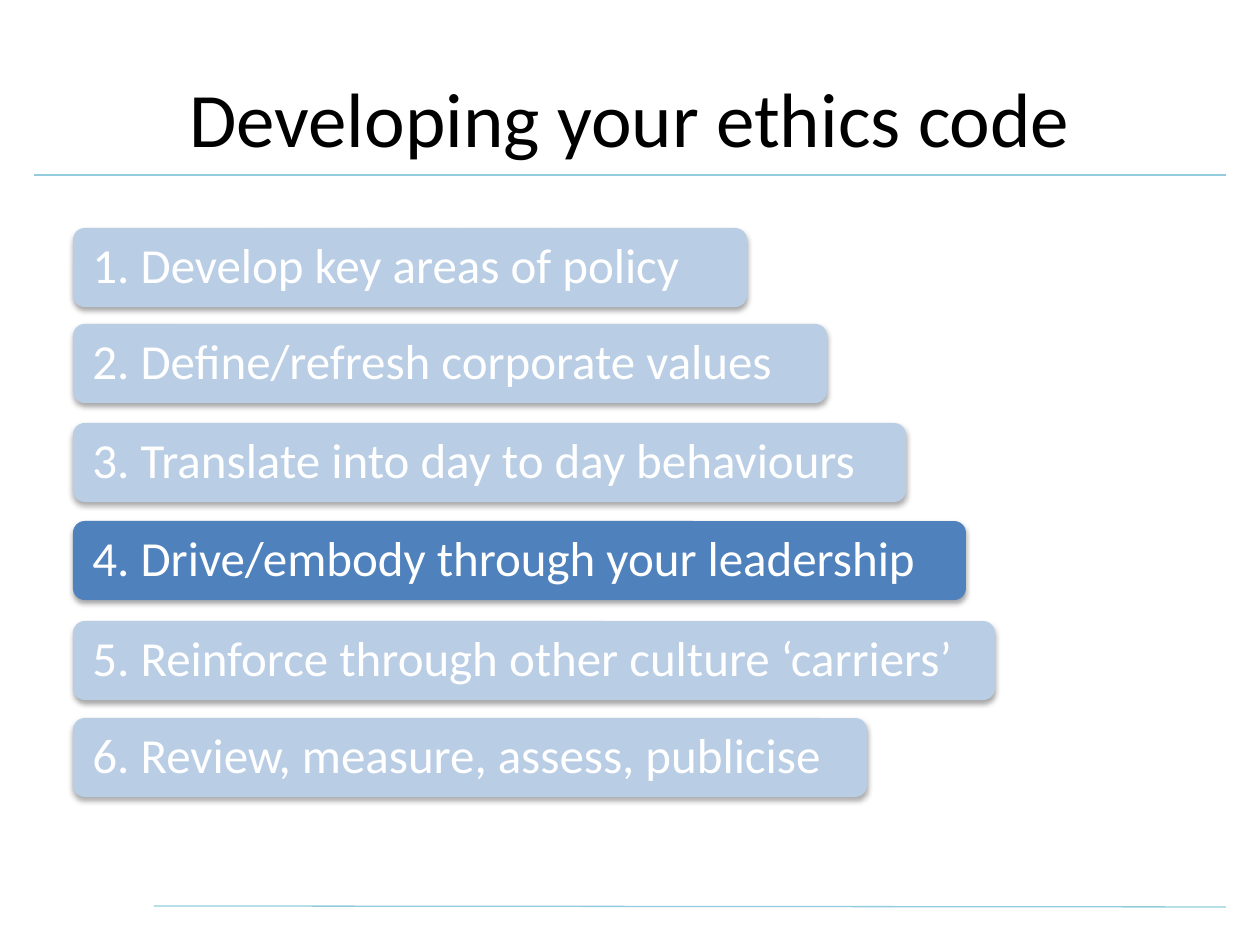
"""Build the slide on the six steps of developing an ethics code."""
from lxml.etree import SubElement
from pptx import Presentation
from pptx.dml.color import RGBColor
from pptx.enum.shapes import MSO_CONNECTOR as LINE, MSO_SHAPE as SHAPE
from pptx.enum.text import MSO_ANCHOR as ANCHOR, PP_ALIGN as ALIGN
from pptx.oxml import parse_xml
from pptx.oxml.ns import qn
from pptx.util import Emu, Pt

STEPS = [
    ("1. Develop key areas of policy", 228, 674),
    ("2. Define/refresh corporate values", 324, 754),
    ("3. Translate into day to day behaviours", 423, 833),
    ("4. Drive/embody through your leadership", 521, 893),
    ("5. Reinforce through other culture ‘carriers’", 621, 922),
    ("6. Review, measure, assess, publicise", 718, 794),
]
CURRENT_STEP = 4


def px(length):
    return Emu(round(length * 914400 / 126))


def color(value):
    return RGBColor.from_string(value)


def write(frame, text, size, ink, align=ALIGN.LEFT, inset=13, spacing=1.0):
    frame.word_wrap = True
    frame.vertical_anchor = ANCHOR.MIDDLE
    frame.margin_left = frame.margin_right = px(inset)
    frame.margin_top = frame.margin_bottom = px(inset)
    paragraph = frame.paragraphs[0]
    paragraph.alignment = align
    paragraph.line_spacing = spacing
    run = paragraph.add_run()
    run.text = text
    run.font.name = "Calibri"
    run.font.size = Pt(size)
    run.font.color.rgb = color(ink)


class EthicsSlide:
    RULE = "93CDDD"
    MUTED = "B9CDE5"
    ACTIVE = "4F81BD"

    def __init__(self, slide):
        self.shapes = slide.shapes

    def rule(self, x1, y1, x2, y2):
        rule = self.shapes.add_connector(LINE.STRAIGHT, px(x1), px(y1), px(x2), px(y2))
        rule.line.color.rgb = color(self.RULE)
        rule.line.width = Pt(0.75)
        SubElement(rule._element.spPr, qn("a:effectLst"))

    def title(self, text, x, y, width, height):
        title = self.shapes.add_textbox(px(x), px(y), px(width), px(height))
        write(title.text_frame, text, 44, "000000", align=ALIGN.CENTER)

    def step(self, text, x, y, width, height, active):
        bar = self.shapes.add_shape(
            SHAPE.ROUNDED_RECTANGLE, px(x), px(y), px(width), px(height))
        bar.adjustments[0] = 0.15
        bar.fill.solid()
        bar.fill.fore_color.rgb = color(self.ACTIVE if active else self.MUTED)
        bar.line.fill.background()
        self.drop_shadow(bar)
        write(bar.text_frame, text, 28, "FFFFFF", inset=16, spacing=0.9)

    def drop_shadow(self, bar):
        bar.shadow.inherit = False
        bar._element.spPr.find(qn("a:effectLst")).append(parse_xml(
            '<a:outerShdw xmlns:a="http://schemas.openxmlformats.org/drawingml/2006/main"'
            ' blurRad="40000" dist="23000" dir="5400000" rotWithShape="0">'
            '<a:srgbClr val="000000"><a:alpha val="35000"/></a:srgbClr></a:outerShdw>'))


def main():
    deck = Presentation()
    deck.slide_width, deck.slide_height = px(1260), px(945)
    page = EthicsSlide(deck.slides.add_slide(deck.slide_layouts[6]))
    page.rule(154, 906, 1226, 907)
    page.rule(34, 175, 1226, 175)
    page.title("Developing your ethics code", 63, 38, 1134, 158)
    for number, (text, top, width) in enumerate(STEPS, 1):
        page.step(text, 73, top, width, 79, active=number == CURRENT_STEP)
    deck.save("out.pptx")


if __name__ == "__main__":
    main()
